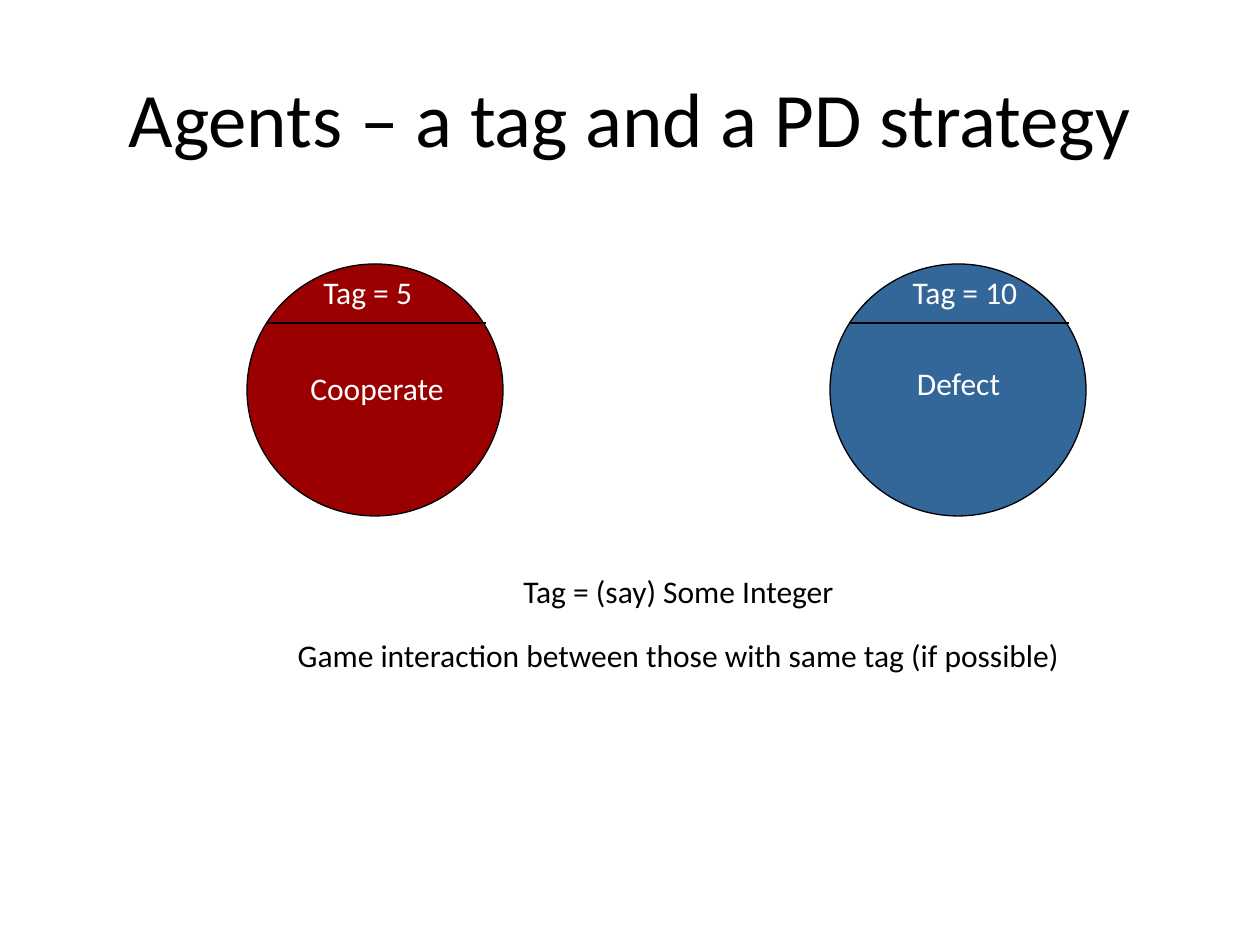
from lxml import etree
from pptx import Presentation
from pptx import util as u
from pptx.dml.color import RGBColor
from pptx.enum import shapes, text
from pptx.oxml.ns import qn

TITLE = "Agents – a tag and a PD strategy"
FONT = "Calibri"
BLACK, WHITE = "000000", "FFFFFF"
LEFT, CENTER = text.PP_ALIGN.LEFT, text.PP_ALIGN.CENTER

# Each agent: circle left, fill, then (wording, box in px, alignment)
AGENTS = [
    dict(left=247, fill="9A0000",
         tag=("Tag = 5", (311, 273, 142, 50), LEFT),
         strategy=("Cooperate", (247, 369, 260, 63), CENTER)),
    dict(left=830, fill="336699",
         tag=("Tag = 10", (869, 273, 192, 50), CENTER),
         strategy=("Defect", (804, 364, 309, 63), CENTER)),
]
NOTES = ["Tag = (say) Some Integer",
         "Game interaction between those with same tag (if possible)"]
NOTES_BOX = (208, 572, 941, 189)

CIRCLE_TOP, CIRCLE_W, CIRCLE_H = 264, 256, 252
DIVIDER_Y, DIVIDER_INSET, DIVIDER_W = 323, 19, 220


def px(*lengths):
    return [u.Emu(round(n * u.Inches(1) / 126)) for n in lengths]


def color(hex_code):
    return RGBColor.from_string(hex_code)


def format_runs(paragraph, size, hex_code):
    for run in paragraph.runs:
        run.font.name, run.font.size = FONT, u.Pt(size)
        run.font.color.rgb = color(hex_code)


def outline(item):
    item.line.color.rgb = color(BLACK)
    item.line.width = u.Pt(0.75)


def add_text(slide, lines, box, align, hex_code, space=15):
    frame = slide.shapes.add_textbox(*px(*box)).text_frame
    frame.word_wrap = True
    frame.text = "\n".join(lines)
    for i, paragraph in enumerate(frame.paragraphs):
        paragraph.alignment = align
        paragraph.space_before = u.Pt(space)
        paragraph.line_spacing = 1.0 if i else 0.83
        format_runs(paragraph, 18, hex_code)


def add_agent(slide, agent):
    left = agent["left"]
    circle = slide.shapes.add_shape(
        shapes.MSO_SHAPE.OVAL, *px(left, CIRCLE_TOP, CIRCLE_W, CIRCLE_H))
    circle.shadow.inherit = False
    circle.fill.solid()
    circle.fill.fore_color.rgb = color(agent["fill"])
    outline(circle)

    # Line between tag and strategy
    start = left + DIVIDER_INSET
    divider = slide.shapes.add_connector(
        shapes.MSO_CONNECTOR.STRAIGHT,
        *px(start, DIVIDER_Y, start + DIVIDER_W, DIVIDER_Y))
    outline(divider)
    etree.SubElement(divider._element.spPr, qn("a:effectLst"))

    for part, space in (("tag", 11.2), ("strategy", 15)):
        wording, box, align = agent[part]
        add_text(slide, [wording], box, align, WHITE, space)


def main():
    deck = Presentation()
    deck.slide_width, deck.slide_height = px(1260, 945)
    slide = deck.slides.add_slide(deck.slide_layouts[5])

    # Title
    title = slide.shapes.title
    title.left, title.top, title.width, title.height = px(63, 38, 1134, 157)
    title.text_frame.text = TITLE
    title.text_frame.vertical_anchor = text.MSO_ANCHOR.MIDDLE
    title.text_frame.paragraphs[0].alignment = CENTER
    format_runs(title.text_frame.paragraphs[0], 44, BLACK)

    # Agents and the explanation below them
    for agent in AGENTS:
        add_agent(slide, agent)
    add_text(slide, NOTES, NOTES_BOX, CENTER, BLACK)

    deck.save("out.pptx")


if __name__ == "__main__":
    main()
